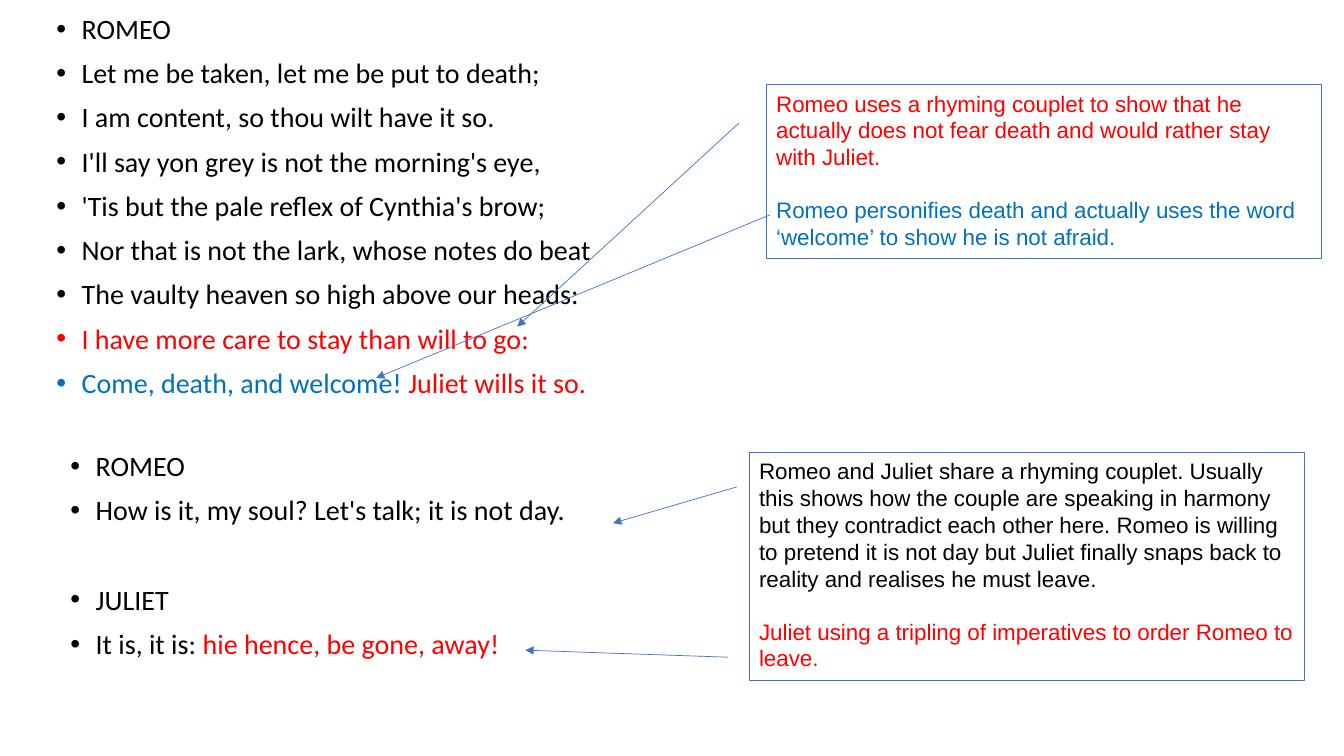
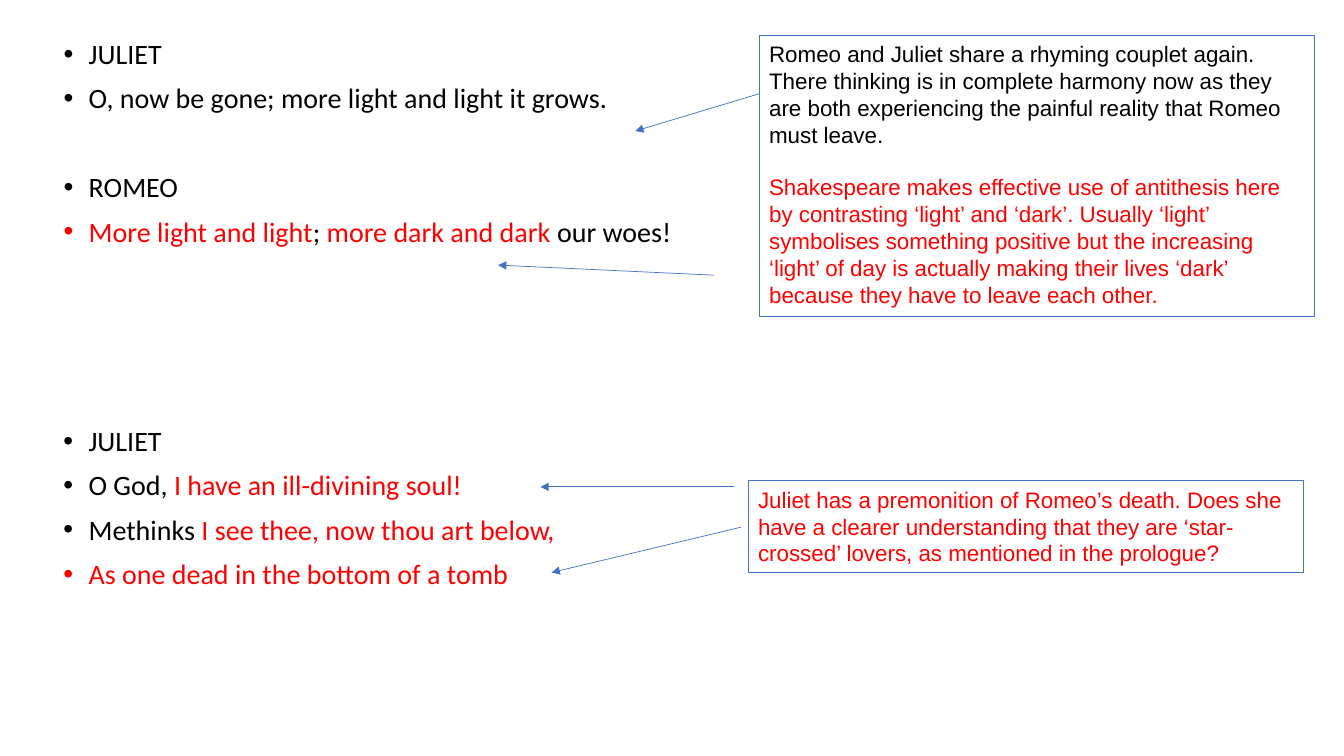
"""Build two annotated slides on Romeo and Juliet's parting at dawn."""
from lxml import etree
from pptx import Presentation
from pptx.dml.color import RGBColor
from pptx.enum.shapes import MSO_CONNECTOR
from pptx.enum.text import MSO_ANCHOR, MSO_AUTO_SIZE, PP_ALIGN
from pptx.oxml.ns import qn
from pptx.util import Inches, Pt

STRAIGHT = MSO_CONNECTOR.STRAIGHT
TOP = MSO_ANCHOR.TOP
LEFT = PP_ALIGN.LEFT
FIXED = MSO_AUTO_SIZE.NONE
GROW = MSO_AUTO_SIZE.SHAPE_TO_FIT_TEXT

COLOURS = {"ink": "000000", "red": "FF0000", "blue": "0070C0", "outline": "4472C4"}
NOTE_WIDTH = 5.51


class Deck:
    """Hold the shared style and the current slide."""

    verse_font, verse_size = "Calibri", 20
    note_font, note_size = "Arial", 16
    line_gap, stanza_gap, note_gap = 10, 42, 18.4

    def __init__(self):
        self.deck = Presentation()
        self.deck.slide_width = Inches(13.33)
        self.deck.slide_height = Inches(7.5)
        self.slide = None

    def colour(self, name):
        return RGBColor.from_string(COLOURS[name])

    def new_slide(self):
        self.slide = self.deck.slides.add_slide(self.deck.slide_layouts[1])
        title = self.slide.shapes.title.element
        title.getparent().remove(title)

    def add_runs(self, paragraph, runs, font, size):
        paragraph.alignment = LEFT
        paragraph.font.name = font
        paragraph.font.size = Pt(size)
        for text, colour in runs:
            run = paragraph.add_run()
            run.text = text
            run.font.color.rgb = self.colour(colour)

    def bullet(self, paragraph):
        properties = paragraph._p.get_or_add_pPr()
        properties.set("marL", str(Inches(0.25)))
        properties.set("indent", str(-Inches(0.25)))
        etree.SubElement(properties, qn("a:buFont"), typeface="Arial")
        etree.SubElement(properties, qn("a:buChar"), char="•")

    def fill_verse(self, passage, box, stanzas):
        passage.left, passage.top, passage.width, passage.height = map(Inches, box)
        frame = passage.text_frame
        frame.word_wrap = True
        frame.auto_size = FIXED
        frame.vertical_anchor = TOP
        paragraph = frame.paragraphs[0]
        for stanza_number, stanza in enumerate(stanzas):
            for line_number, runs in enumerate(stanza):
                if stanza_number or line_number:
                    paragraph = frame.add_paragraph()
                opens_stanza = stanza_number and not line_number
                paragraph.line_spacing = 0.9
                paragraph.space_before = Pt(self.stanza_gap if opens_stanza else self.line_gap)
                self.bullet(paragraph)
                self.add_runs(paragraph, runs, self.verse_font, self.verse_size)

    def main_verse(self, box, *stanzas):
        self.fill_verse(self.slide.placeholders[1], box, stanzas)

    def second_verse(self, box, *stanzas):
        passage = self.slide.shapes.add_textbox(*map(Inches, box))
        self.fill_verse(passage, box, stanzas)

    def note(self, left, top, height, *remarks):
        note = self.slide.shapes.add_textbox(*map(Inches, (left, top, NOTE_WIDTH, height)))
        note.line.color.rgb = self.colour("outline")
        note.line.width = Pt(0.75)
        frame = note.text_frame
        frame.word_wrap = True
        frame.auto_size = GROW
        for number, remark in enumerate(remarks):
            paragraph = frame.add_paragraph() if number else frame.paragraphs[0]
            paragraph.space_before = Pt(self.note_gap if number else 0)
            self.add_runs(paragraph, [remark], self.note_font, self.note_size)

    def arrow(self, start, end):
        arrow = self.slide.shapes.add_connector(STRAIGHT, *map(Inches, start + end))
        arrow.line.color.rgb = self.colour("outline")
        arrow.line.width = Pt(0.5)
        etree.SubElement(arrow.line._get_or_add_ln(), qn("a:tailEnd"), type="triangle")
        etree.SubElement(arrow._element.spPr, qn("a:effectLst"))

    def save(self):
        self.deck.save("out.pptx")


def ink(*lines):
    return [[(line, "ink")] for line in lines]


def build_willing_death(deck):
    deck.new_slide()
    deck.main_verse(
        (0.46, 0.1, 5.62, 3.97),
        ink(
            "ROMEO",
            "Let me be taken, let me be put to death;",
            "I am content, so thou wilt have it so.",
            "I'll say yon grey is not the morning's eye,",
            "'Tis but the pale reflex of Cynthia's brow;",
            "Nor that is not the lark, whose notes do beat",
            "The vaulty heaven so high above our heads:",
        ) + [
            [("I have more care to stay than will to go:", "red")],
            [("Come, death, and welcome! ", "blue"), ("Juliet wills it so.", "red")],
        ],
    )
    deck.note(
        7.6, 0.84, 1.72,
        ("Romeo uses a rhyming couplet to show that he actually does not fear death "
         "and would rather stay with Juliet.", "red"),
        ("Romeo personifies death and actually uses the word ‘welcome’ to show "
         "he is not afraid.", "blue"),
    )
    deck.arrow((7.33, 1.22), (5.13, 3.24))
    deck.arrow((7.64, 2.13), (3.73, 3.75))
    deck.second_verse(
        (0.6, 4.44, 5.62, 2.41),
        ink("ROMEO", "How is it, my soul? Let's talk; it is not day."),
        ink("JULIET") + [[("It is, it is: ", "ink"), ("hie hence, be gone, away!", "red")]],
    )
    deck.note(
        7.43, 4.49, 2.26,
        ("Romeo and Juliet share a rhyming couplet. Usually this shows how the couple "
         "are speaking in harmony but they contradict each other here. Romeo is willing "
         "to pretend it is not day but Juliet finally snaps back to reality and realises "
         "he must leave.", "ink"),
        ("Juliet using a tripling of imperatives to order Romeo to leave.", "red"),
    )
    deck.arrow((7.22, 6.52), (5.21, 6.45))
    deck.arrow((7.31, 4.83), (6.08, 5.19))


def build_light_and_dark(deck):
    deck.new_slide()
    deck.main_verse(
        (0.53, 0.35, 6.55, 2.39),
        ink("JULIET", "O, now be gone; more light and light it grows."),
        ink("ROMEO") + [[
            ("More light and light", "red"), ("; ", "ink"),
            ("more dark and dark ", "red"), ("our woes!", "ink"),
        ]],
    )
    deck.note(
        7.53, 0.35, 2.79,
        ("Romeo and Juliet share a rhyming couplet again. There thinking is in complete "
         "harmony now as they are both experiencing the painful reality that Romeo "
         "must leave.", "ink"),
        ("Shakespeare makes effective use of antithesis here by contrasting ‘light’ and "
         "‘dark’. Usually ‘light’ symbolises something positive but the increasing "
         "‘light’ of day is actually making their lives ‘dark’ because they have to "
         "leave each other.", "red"),
    )
    deck.arrow((7.53, 0.93), (6.3, 1.3))
    deck.arrow((7.08, 2.73), (4.94, 2.63))
    deck.second_verse(
        (0.53, 4.19, 6.55, 2.39),
        ink("JULIET") + [
            [("O God, ", "ink"), ("I have an ill-divining soul!", "red")],
            [("Methinks ", "ink"), ("I see thee, now thou art below,", "red")],
            [("As one dead in the bottom of a tomb", "red")],
        ],
    )
    deck.note(
        7.42, 4.77, 0.91,
        ("Juliet has a premonition of Romeo’s death. Does she have a clearer understanding "
         "that they are ‘star-crossed’ lovers, as mentioned in the prologue?", "red"),
    )
    deck.arrow((7.28, 4.83), (5.36, 4.83))
    deck.arrow((7.35, 5.23), (5.47, 5.68))


def main():
    deck = Deck()
    build_willing_death(deck)
    build_light_and_dark(deck)
    deck.save()


if __name__ == "__main__":
    main()
